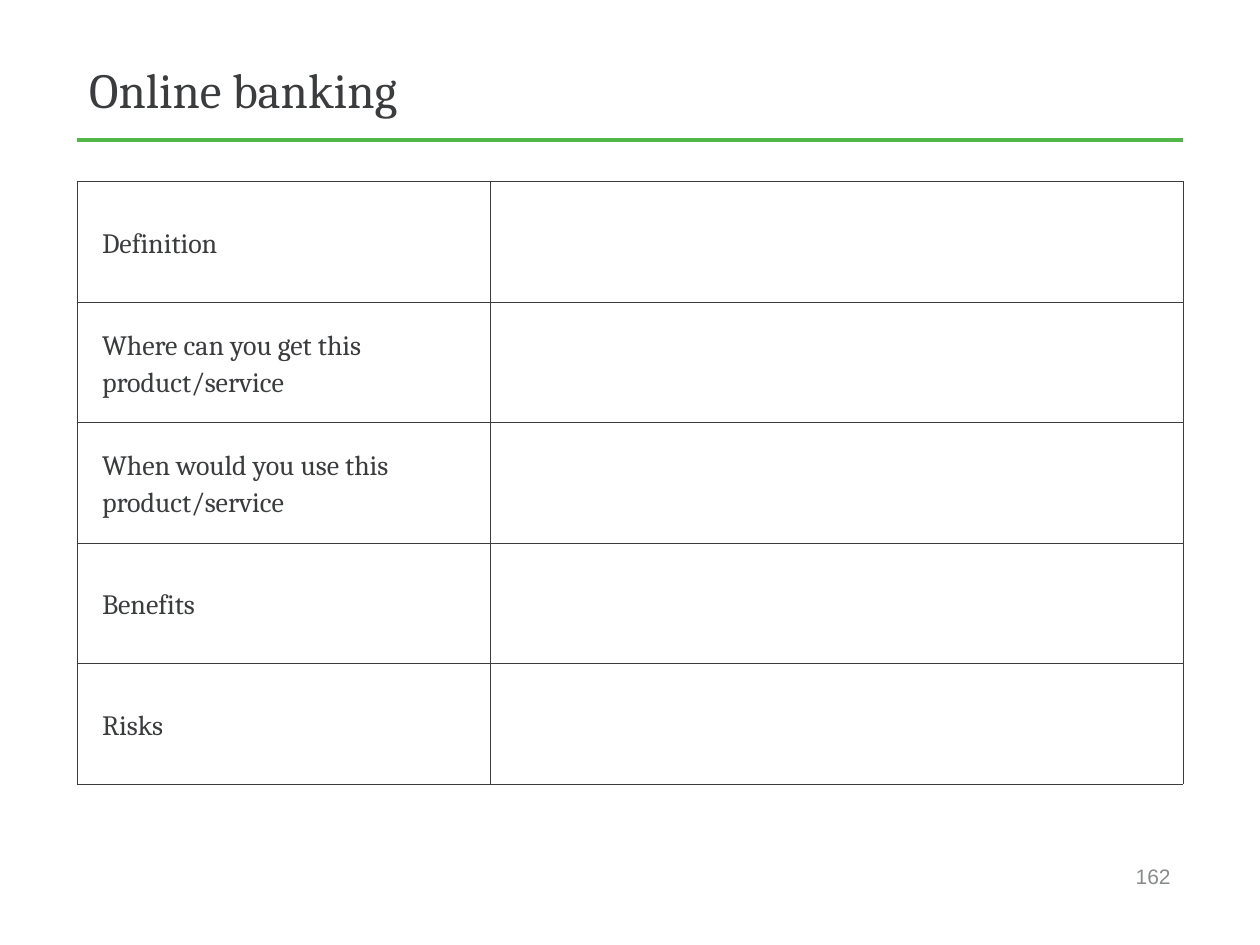
"""Build the "Online banking" worksheet slide with a five-row question table."""
from lxml.etree import SubElement
from pptx import Presentation
from pptx.dml.color import RGBColor
from pptx.enum.shapes import MSO_CONNECTOR
from pptx.enum.text import MSO_ANCHOR, PP_ALIGN
from pptx.oxml.ns import qn
from pptx.util import Inches, Pt

COLORS = {"rule": "50B748", "text": "3B3C3E", "border": "3A3C3E", "number": "8A8B8C"}
QUESTIONS = [
    "Definition",
    "Where can you get this product/service",
    "When would you use this product/service",
    "Benefits",
    "Risks",
]
LEFT, RIGHT = Inches(0.61), Inches(9.39)
WIDTH = RIGHT - LEFT
LABEL_WIDTH = Inches(3.28)
ROW_HEIGHT = Inches(0.956)


def add_span(paragraph, text, font, size, color):
    span = paragraph.add_run()
    span.text = text
    span.font.name = font
    span.font.size = Pt(size)
    span.font.color.rgb = RGBColor.from_string(COLORS[color])


def add_borders(cell):
    properties = cell._tc.get_or_add_tcPr()
    for position, side in enumerate(("a:lnL", "a:lnR", "a:lnT", "a:lnB")):
        line = SubElement(properties, qn(side), w=str(Pt(0.25)))
        fill = SubElement(line, qn("a:solidFill"))
        SubElement(fill, qn("a:srgbClr"), val=COLORS["border"])
        properties.insert(position, line)


deck = Presentation()
deck.slide_width, deck.slide_height = Inches(10), Inches(7.5)
page = deck.slides.add_slide(deck.slide_layouts[6])

rule = page.shapes.add_connector(MSO_CONNECTOR.STRAIGHT, LEFT, Inches(1.11), RIGHT, Inches(1.11))
rule.line.color.rgb = RGBColor.from_string(COLORS["rule"])
rule.line.width = Pt(2)
SubElement(rule._element.spPr, qn("a:effectLst"))

number_left = Inches(6.23)
for text, left, top, height, font, size, color, align in [
    ("Online banking", LEFT, 0.3, 0.81, "Cambria", 28, "text", PP_ALIGN.LEFT),
    ("162", number_left, 6.75, 0.4, "Arial", 12, "number", PP_ALIGN.RIGHT),
]:
    box = page.shapes.add_textbox(left, Inches(top), RIGHT - left, Inches(height))
    box.text_frame.word_wrap = True
    box.text_frame.vertical_anchor = MSO_ANCHOR.MIDDLE
    para = box.text_frame.paragraphs[0]
    para.alignment = align
    add_span(para, text, font, size, color)

table = page.shapes.add_table(
    len(QUESTIONS), 2, LEFT, Inches(1.44), WIDTH, ROW_HEIGHT * len(QUESTIONS)
).table
table.first_row = table.horz_banding = False
table.columns[0].width = LABEL_WIDTH
table.columns[1].width = WIDTH - LABEL_WIDTH

for row, question in zip(table.rows, QUESTIONS):
    row.height = ROW_HEIGHT
    for cell in row.cells:
        cell.fill.background()
        add_borders(cell)
    label = row.cells[0]
    label.vertical_anchor = MSO_ANCHOR.MIDDLE
    label.margin_left = Inches(0.2)
    para = label.text_frame.paragraphs[0]
    para.line_spacing = 1.15
    add_span(para, question, "Cambria", 16, "text")

deck.save("out.pptx")
